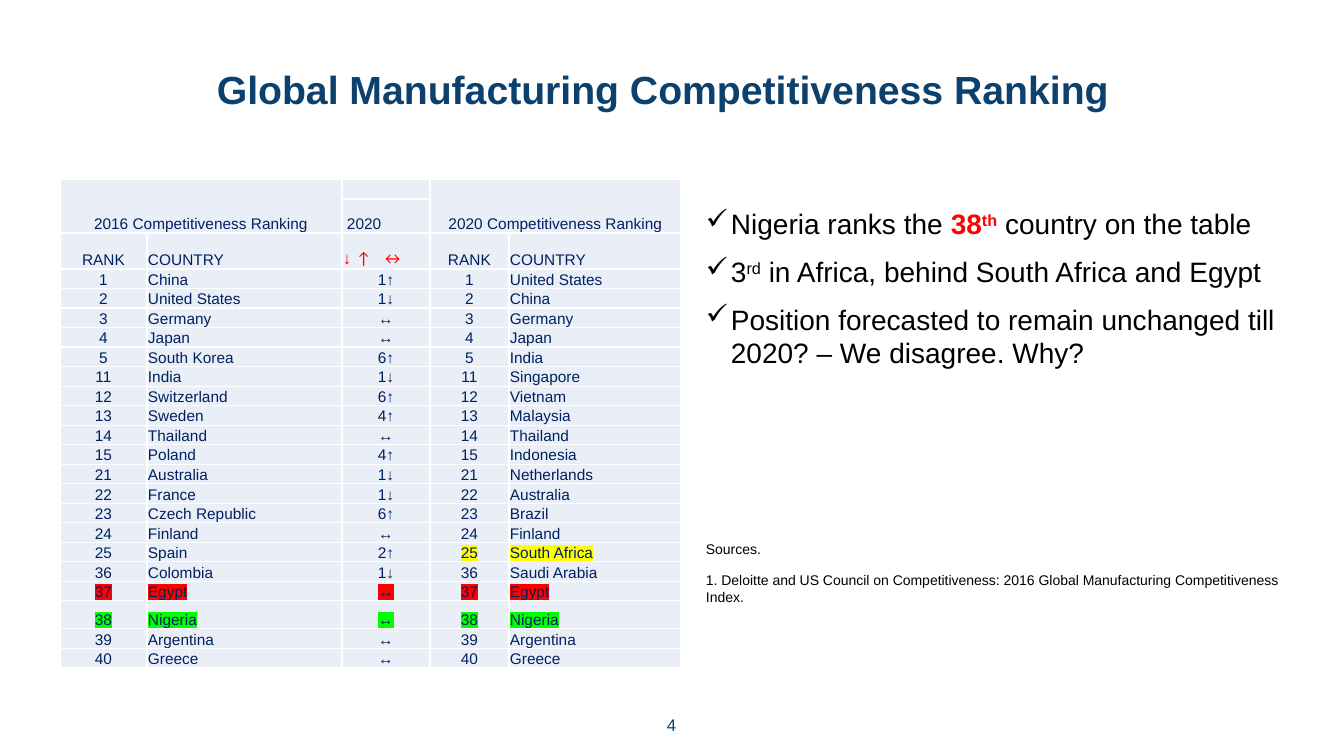
from lxml.etree import SubElement
from pptx import Presentation
from pptx.dml.color import RGBColor
from pptx.enum.text import MSO_ANCHOR, PP_ALIGN
from pptx.oxml.ns import qn
from pptx.util import Pt

WHITE = RGBColor(0xFF, 0xFF, 0xFF)
BLACK = RGBColor(0x00, 0x00, 0x00)
TITLE_BLUE = RGBColor(0x0C, 0x40, 0x6D)
NAVY = RGBColor(0x00, 0x20, 0x60)
PALE_BLUE = RGBColor(0xEA, 0xEF, 0xF7)
RED = RGBColor(0xFF, 0x00, 0x00)
GREEN = RGBColor(0x00, 0xFF, 0x00)
YELLOW = RGBColor(0xFF, 0xFF, 0x00)

HIGHLIGHTS = {"South Africa": YELLOW, "Egypt": RED, "Nigeria": GREEN}
COLUMN_WIDTHS = (87, 195, 88, 79, 172)
HEADER_HEIGHTS = (20, 34, 36)
CENTERED_COLUMNS = (0, 2, 3)
RANKING = (
    ("1", "China", "1↑", "United States"),
    ("2", "United States", "1↓", "China"),
    ("3", "Germany", "↔", "Germany"),
    ("4", "Japan", "↔", "Japan"),
    ("5", "South Korea", "6↑", "India"),
    ("11", "India", "1↓", "Singapore"),
    ("12", "Switzerland", "6↑", "Vietnam"),
    ("13", "Sweden", "4↑", "Malaysia"),
    ("14", "Thailand", "↔", "Thailand"),
    ("15", "Poland", "4↑", "Indonesia"),
    ("21", "Australia", "1↓", "Netherlands"),
    ("22", "France", "1↓", "Australia"),
    ("23", "Czech Republic", "6↑", "Brazil"),
    ("24", "Finland", "↔", "Finland"),
    ("25", "Spain", "2↑", "South Africa"),
    ("36", "Colombia", "1↓", "Saudi Arabia"),
    ("37", "Egypt", "↔", "Egypt"),
    ("38", "Nigeria", "↔", "Nigeria"),
    ("39", "Argentina", "↔", "Argentina"),
    ("40", "Greece", "↔", "Greece"),
)


class RankingSlide:
    """Draws elements on one slide in a shared style, with lengths in px."""

    SCALE = 12192000 / 1344
    FONT = "Arial"

    def __init__(self, deck):
        deck.slide_width, deck.slide_height = self.px(1344), self.px(756)
        self.page = deck.slides.add_slide(deck.slide_layouts[6])

    def px(self, length):
        """Turn px into EMU."""
        return round(length * self.SCALE)

    def style(self, span, size, color, bold=False, font=FONT, raised=False, highlight=None):
        """Format one run."""
        span.font.name = font
        span.font.size = Pt(size)
        span.font.bold = bold
        span.font.color.rgb = color
        properties = span.font._element
        if raised:
            properties.set("baseline", "30000")
        if highlight is not None:
            mark = SubElement(properties, qn("a:highlight"))
            SubElement(mark, qn("a:srgbClr"), val=str(highlight))
            properties.find(qn("a:solidFill")).addnext(mark)

    def text(self, area, lines, size, color, bold=False, align=PP_ALIGN.LEFT, anchor=MSO_ANCHOR.TOP):
        """Add a text box with one paragraph a line and return its paragraphs."""
        box = self.page.shapes.add_textbox(*map(self.px, area))
        frame = box.text_frame
        frame.word_wrap = True
        frame.vertical_anchor = anchor
        frame.text = "\n".join(lines)
        for index, para in enumerate(frame.paragraphs):
            para.alignment = align
            if index:
                para.space_before = Pt(10)
            for span in para.runs:
                self.style(span, size, color, bold)
        return frame.paragraphs

    def bullets(self, area, items, size):
        """Add a check list whose items are lists of (text, run style)."""
        for para, item in zip(self.text(area, [""] * len(items), size, BLACK), items):
            properties = para._p.get_or_add_pPr()
            properties.set("marL", str(self.px(25)))
            properties.set("indent", str(self.px(-25)))
            SubElement(properties, qn("a:buChar"), char="✓")
            self.spans(para, item, size, BLACK)

    def spans(self, para, parts, size, color):
        """Add differently styled runs to a paragraph."""
        for words, changes in parts:
            span = para.add_run()
            span.text = words
            self.style(span, **{"size": size, "color": color, **changes})

    def table(self, left, top, widths, heights):
        """Add a pale table with white borders; heights are in EMU."""
        frame = self.page.shapes.add_table(
            len(heights), len(widths), self.px(left), self.px(top),
            self.px(sum(widths)), sum(heights))
        table = frame.table
        table.first_row = table.horz_banding = False
        for column, width in zip(table.columns, widths):
            column.width = self.px(width)
        for row, height in zip(table.rows, heights):
            row.height = height
        for cell in table.iter_cells():
            cell.margin_left = cell.margin_right = cell.margin_top = self.px(1)
            cell.margin_bottom = 0
            cell.vertical_anchor = MSO_ANCHOR.BOTTOM
            for side in ("lnL", "lnR", "lnT", "lnB"):
                border = SubElement(cell._tc.get_or_add_tcPr(), qn(f"a:{side}"), w=str(Pt(1)))
                paint = SubElement(border, qn("a:solidFill"))
                SubElement(paint, qn("a:srgbClr"), val=str(WHITE))
            cell.fill.solid()
            cell.fill.fore_color.rgb = PALE_BLUE
            SubElement(cell.text_frame.paragraphs[0]._p, qn("a:endParaRPr"), sz="1100")
        return table

    def cell(self, cell, words, centered, highlight=None):
        """Write one table cell and return its paragraph."""
        para = cell.text_frame.paragraphs[0]
        para.text = words
        para.alignment = PP_ALIGN.CENTER if centered else PP_ALIGN.LEFT
        for span in para.runs:
            self.style(span, 11, NAVY, highlight=highlight)
        return para


def add_ranking(slide):
    """Add the table that compares the 2016 and 2020 rankings."""
    plain = slide.px(371) // 19
    heights = [slide.px(height) for height in HEADER_HEIGHTS]
    heights += [slide.px(28) if row[1] == "Nigeria" else plain for row in RANKING]
    table = slide.table(60, 179, COLUMN_WIDTHS, heights)

    for column, year in ((0, 2016), (3, 2020)):
        table.cell(0, column).merge(table.cell(1, column + 1))
        slide.cell(table.cell(0, column), f"{year} Competitiveness Ranking", True)
        slide.cell(table.cell(2, column), "RANK", True)
        slide.cell(table.cell(2, column + 1), "COUNTRY", False)
    year = slide.cell(table.cell(1, 2), "2020", False)
    year._p.get_or_add_pPr().set("marL", str(slide.px(4)))

    arrows = slide.cell(table.cell(2, 2), "", False)
    stops = SubElement(arrows._p.get_or_add_pPr(), qn("a:tabLst"))
    SubElement(stops, qn("a:tab"), pos=str(slide.px(39)), algn="l")
    slide.spans(arrows, [("↓ ", {}), ("↑\t↔", {"font": "Calibri"})], 12, RED)

    for index, (rank, before, change, after) in enumerate(RANKING, len(HEADER_HEIGHTS)):
        for column, words in enumerate((rank, before, change, rank, after)):
            highlight = HIGHLIGHTS.get(before if column < 3 else after)
            slide.cell(table.cell(index, column), words, column in CENTERED_COLUMNS, highlight)


def main():
    deck = Presentation()
    slide = RankingSlide(deck)
    slide.text((644, 707, 55, 36), ["4"], 12, TITLE_BLUE,
               align=PP_ALIGN.CENTER, anchor=MSO_ANCHOR.MIDDLE)
    title, = slide.text((207, 44, 1092, 95), ["Global Manufacturing Competitiveness Ranking"],
                        28, TITLE_BLUE, bold=True, anchor=MSO_ANCHOR.MIDDLE)
    title.line_spacing = 0.9
    add_ranking(slide)
    stress = {"color": RED, "bold": True}
    slide.bullets((696, 202, 603, 180), [
        [("Nigeria ranks the ", {}), ("38", stress), ("th", {**stress, "raised": True}),
         (" country on the table", {})],
        [("3", {}), ("rd", {"raised": True}), (" in Africa, behind South Africa and Egypt", {})],
        [("Position forecasted to remain unchanged till 2020? – We disagree. Why?", {})],
    ], 20)
    slide.text((696, 536, 603, 132), [
        "Sources.",
        "1. Deloitte and US Council on Competitiveness: 2016 Global Manufacturing Competitiveness Index.",
    ], 10, BLACK)
    deck.save("out.pptx")


if __name__ == "__main__":
    main()
